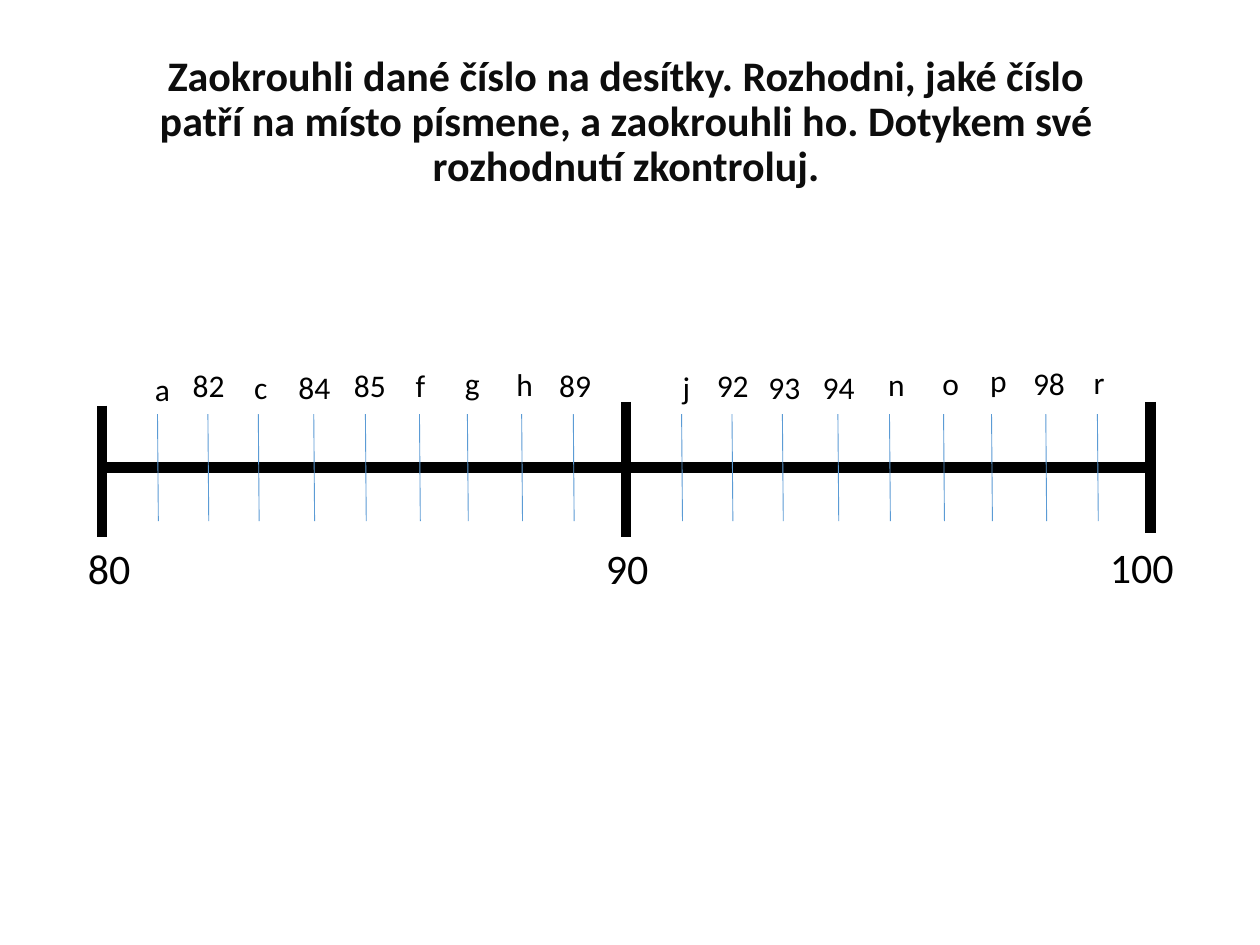
from pptx import Presentation
from pptx.dml.color import RGBColor
from pptx.enum.shapes import MSO_CONNECTOR
from pptx.enum.text import MSO_ANCHOR, MSO_AUTO_SIZE, PP_ALIGN
from pptx.oxml.ns import qn
from pptx.util import Pt
from lxml.etree import SubElement

COLORS = {"ink": "000000", "title": "0D0D0D", "tick": "5B9BD5"}
TITLE = ("Zaokrouhli dané číslo na desítky. Rozhodni, jaké číslo patří na místo "
         "písmene, a zaokrouhli ho. Dotykem své rozhodnutí zkontroluj.")
START, SPAN, AXIS = 58.3, 299.5, 267.1
TICKS = [31.7, 60.5, 89.3, 121, 150.5, 181.4, 208.8, 239.8, 269.3]
# text, left, top, width
MARKS = [
    ("a", 81.4, 208.1, 41), ("82", 103, 205.9, 37.4), ("c", 138.2, 206.6, 36.7),
    ("84", 163.4, 206.6, 35.3), ("85", 195.1, 205.9, 39.6), ("f", 230.4, 205.9, 20.2),
    ("g", 258.5, 204.5, 25.2), ("h", 288, 205.2, 41.8), ("89", 312.5, 205.9, 38.2),
    ("j", 383, 206.6, 41), ("92", 402.5, 205.9, 37.4), ("93", 432, 206.6, 36.7),
    ("94", 463, 206.6, 35.3), ("n", 500.4, 205.2, 39.6), ("o", 531.4, 204.5, 38.2),
    ("p", 558.7, 203, 41.8), ("98", 583.2, 204.5, 41.8), ("r", 617.8, 203.8, 38.2),
]
TENS = [[("80", 43.2, 306.7, 38.9), ("90", 339.1, 306.7, 38.9)],
        [("100", 627.1, 306, 57.6)]]


def rgb(name):
    return RGBColor.from_string(COLORS[name])


def style(font, color, **values):
    font.color.rgb = rgb(color)
    for key, value in {"name": "Calibri", **values}.items():
        setattr(font, key, value)


def add_title(slide):
    title = slide.shapes.title
    box = {"left": 72.7, "top": 25.2, "width": 570.2, "height": 90}
    for key, value in box.items():
        setattr(title, key, Pt(value))
    frame = title.text_frame
    frame.text = TITLE
    form = {"word_wrap": True, "auto_size": MSO_AUTO_SIZE.NONE,
            "vertical_anchor": MSO_ANCHOR.MIDDLE}
    for key, value in form.items():
        setattr(frame, key, value)
    para = frame.paragraphs[0]
    para.alignment = PP_ALIGN.CENTER
    para.line_spacing = 0.9
    style(para.runs[0].font, "title", size=Pt(24), bold=True)


def add_label(shapes, text, left, top, width, size):
    box = shapes.add_textbox(Pt(left), Pt(top), Pt(width), Pt(size * 1.2 + 7.2))
    frame = box.text_frame
    frame.word_wrap = True
    frame.auto_size = MSO_AUTO_SIZE.SHAPE_TO_FIT_TEXT
    frame.text = text
    style(frame.paragraphs[0].runs[0].font, "ink", size=Pt(size))


def add_line(shapes, start, end, color, width):
    ends = [Pt(value) for value in (*start, *end)]
    line = shapes.add_connector(MSO_CONNECTOR.STRAIGHT, *ends)
    line.line.color.rgb = rgb(color)
    line.line.width = Pt(width)
    SubElement(line._element.spPr, qn("a:effectLst"))


def add_scale(slide, left, tens):
    """Draw one span of ten with its posts, ticks and end numbers."""
    shapes = slide.shapes.add_group_shape().shapes
    right = left + SPAN
    add_line(shapes, (left, AXIS), (right - 1.4, AXIS), "ink", 6)
    for x, top in ((left, 231.8), (right, 229.7)):
        add_line(shapes, (x, top), (x, top + 74.9), "ink", 6)
    for step in TICKS:
        x = left + step
        add_line(shapes, (x, 236.6), (x + 0.5, 297.8), "tick", 0.5)
    for label in tens:
        add_label(shapes, *label, 24)


def main():
    deck = Presentation()
    deck.slide_width, deck.slide_height = Pt(720), Pt(540)
    slide = deck.slides.add_slide(deck.slide_layouts[5])
    add_title(slide)
    for index, tens in enumerate(TENS):
        add_scale(slide, START + index * SPAN, tens)
    for mark in MARKS:
        add_label(slide.shapes, *mark, 18)
    deck.save("out.pptx")


if __name__ == "__main__":
    main()
